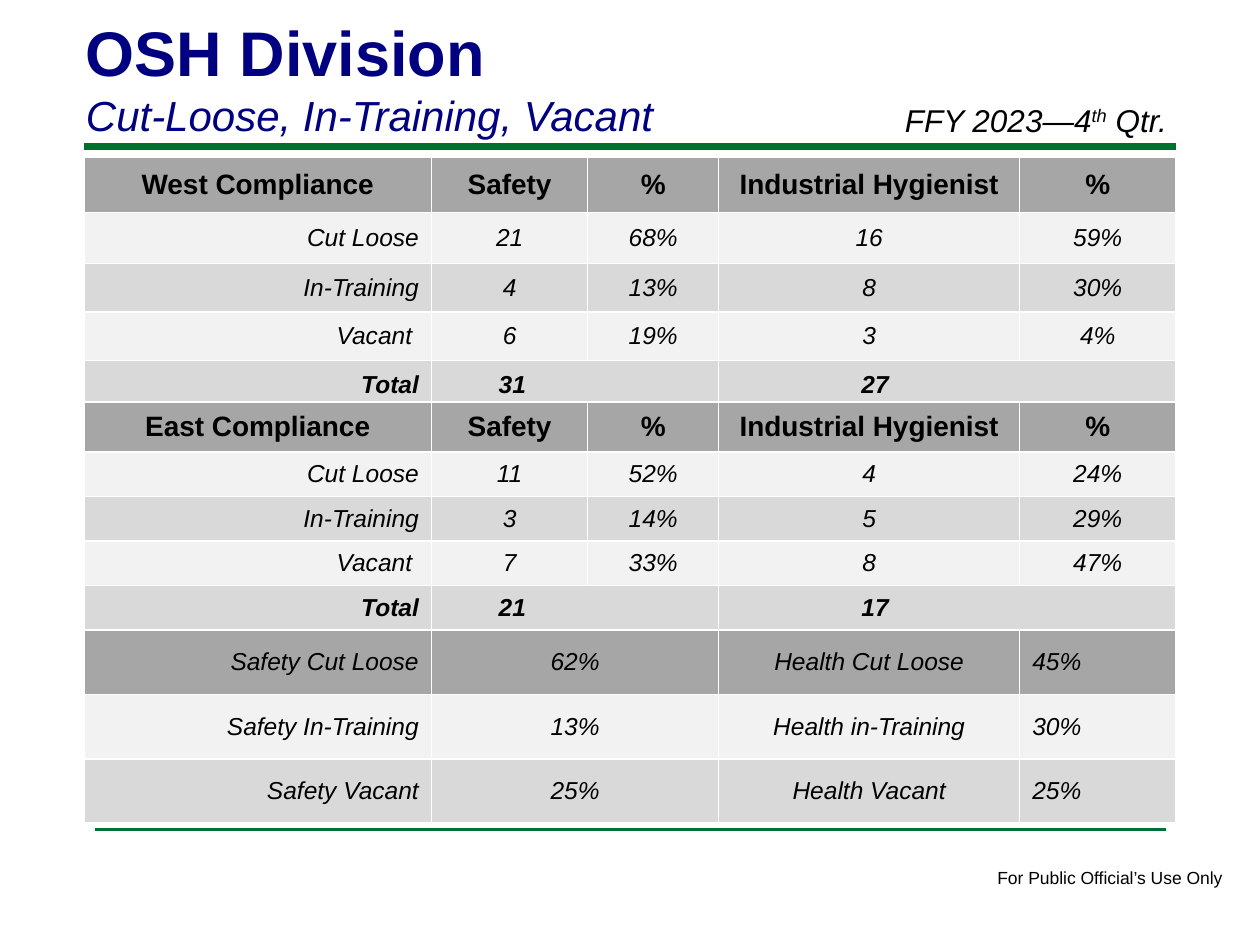
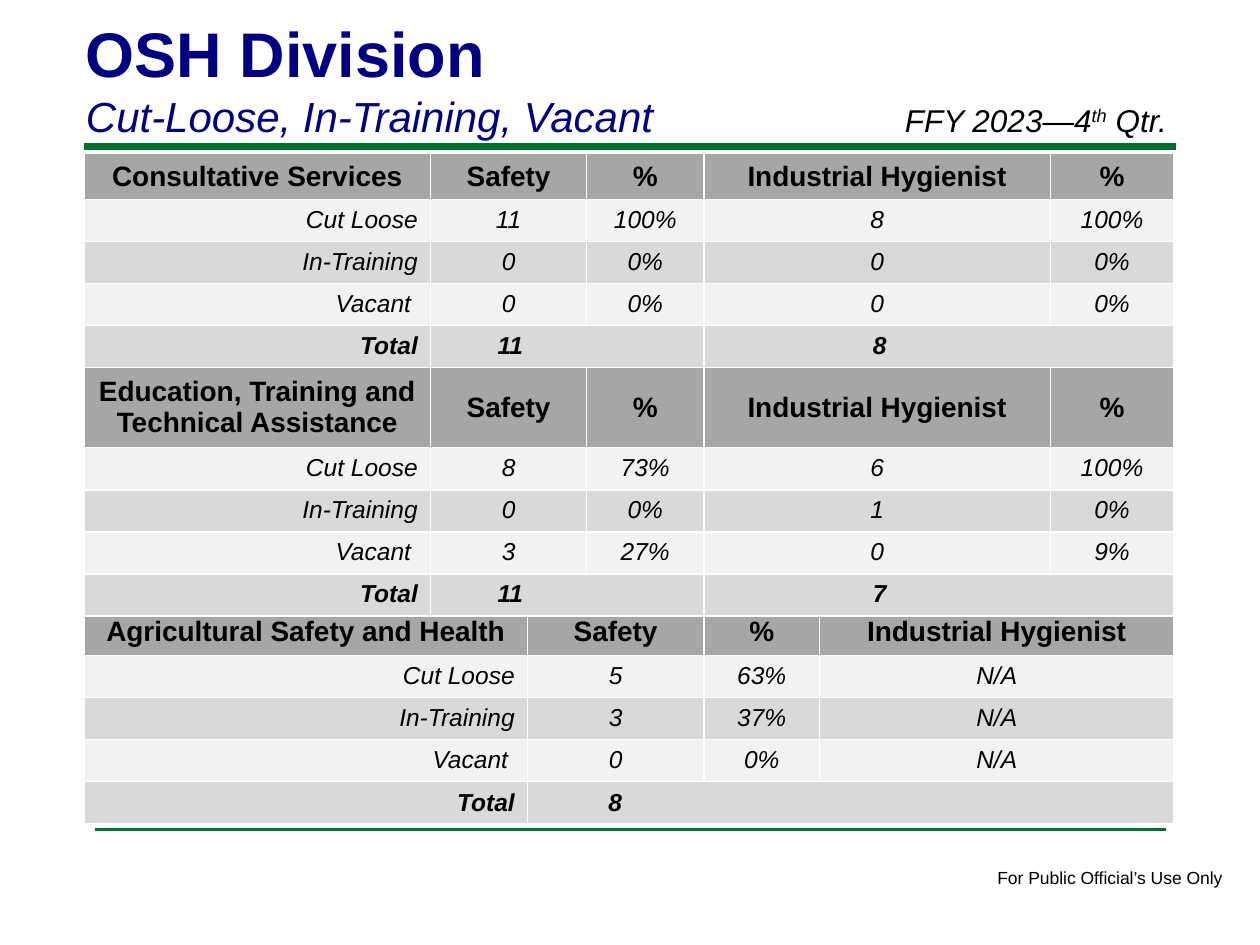
import pptx
import pptx.dml.color
import pptx.enum.shapes
import pptx.enum.text
import pptx.util
import lxml.etree

FONT = "Arial"
BLACK, NAVY, GREEN = "000000", "000080", "007030"
HEADER_GRAY, LIGHT_GRAY, MID_GRAY = "A6A6A6", "F2F2F2", "D9D9D9"

# The slide is a grid of 120 columns by 90 rows of square units
SLIDE_WIDTH, SLIDE_HEIGHT = pptx.util.Inches(10), pptx.util.Inches(7.5)
UNIT = SLIDE_WIDTH // 120

ALIGN = pptx.enum.text.PP_ALIGN
ANCHOR = pptx.enum.text.MSO_ANCHOR

HEADER_FORMAT = {"size": 16, "bold": True, "italic": False}
BODY_FORMAT = {"size": 14, "bold": False, "italic": True}
TOTAL_FORMAT = {"size": 14, "bold": True, "italic": True}

FIVE_HEADS = ("Safety", "%", "Industrial Hygienist", "%")


def grid(value):
    return pptx.util.Emu(round(value * UNIT))


def color(hex_string):
    return pptx.dml.color.RGBColor.from_string(hex_string)


def add_run(paragraph, text, values, text_color=BLACK):
    run = paragraph.add_run()
    run.text = text
    run.font.name = FONT
    run.font.color.rgb = color(text_color)
    for name, value in values.items():
        setattr(run.font, name, pptx.util.Pt(value) if name == "size" else value)
    return run


def add_text_frame(slide, box, anchor=ANCHOR.BOTTOM, wrap=True):
    text_frame = slide.shapes.add_textbox(*map(grid, box)).text_frame
    text_frame.word_wrap = wrap
    text_frame.vertical_anchor = anchor
    return text_frame


def add_rule(slide, left, right, row, weight):
    connector = slide.shapes.add_connector(
        pptx.enum.shapes.MSO_CONNECTOR.STRAIGHT,
        grid(left), grid(row), grid(right), grid(row))
    connector.line.color.rgb = color(GREEN)
    connector.line.width = pptx.util.Pt(weight)
    properties = connector._element.spPr
    lxml.etree.SubElement(properties, pptx.oxml.ns.qn("a:effectLst"))


# Rules and footer note
def add_frame(slide):
    add_rule(slide, 8, 112, 14, 4)
    add_rule(slide, 9, 111, 79, 2)
    footer = add_text_frame(slide, (93.8, 82, 24.1, 3.2), ANCHOR.TOP, wrap=False)
    add_run(footer.paragraphs[0], "For Public Official’s Use Only", {"size": 10})


# Two-line title on the left
def add_title(slide, top):
    title = add_text_frame(slide, (7, top, 99, 13.3))
    add_run(title.paragraphs[0], "OSH Division", {"size": 36, "bold": True}, NAVY)
    add_run(title.add_paragraph(), "Cut-Loose, In-Training, Vacant",
            {"size": 24, "italic": True}, NAVY)


# Reporting period on the right
def add_period(slide):
    paragraph = add_text_frame(slide, (85, 9, 30, 4.8)).paragraphs[0]
    values = {"size": 18, "italic": True}
    add_run(paragraph, "FFY 2023—4", values)
    ordinal = add_run(paragraph, "th", values)
    ordinal.font._element.set("baseline", "30000")
    add_run(paragraph, " Qtr.", values)


def fill_cell(cell, text, values, fill, alignment, anchor):
    cell.fill.solid()
    cell.fill.fore_color.rgb = color(fill)
    cell.vertical_anchor = anchor
    paragraph = cell.text_frame.paragraphs[0]
    paragraph.alignment = alignment
    if text:
        add_run(paragraph, text, values)


def share_out(parts, weights, length, attribute):
    for part, weight in zip(parts, weights):
        setattr(part, attribute, grid(length * weight / sum(weights)))


def add_plain_table(slide, box, columns, rows, row_weights, formats,
                    header_alignments, body_alignments, anchor=ANCHOR.MIDDLE):
    table = slide.shapes.add_table(len(rows), len(columns), *map(grid, box)).table
    share_out(table.columns, columns, box[2], "width")
    share_out(table.rows, row_weights, box[3], "height")
    for row_index, row in enumerate(rows):
        is_header = row_index == 0
        fill = HEADER_GRAY if is_header else (MID_GRAY, LIGHT_GRAY)[row_index % 2]
        alignments = header_alignments if is_header else body_alignments
        for column_index, text in enumerate(row):
            fill_cell(table.cell(row_index, column_index), text, formats[row_index],
                      fill, alignments[column_index],
                      ANCHOR.MIDDLE if is_header else anchor)
    return table


# Staffing of one unit: header, three states, total
def add_staff_table(slide, box, columns, row_weights, heads, states, totals,
                    anchor=ANCHOR.MIDDLE):
    """totals lists (first column, last column, text, indent) of merged cells."""
    count = len(columns)
    labels = ("Cut Loose", "In-Training", "Vacant ")
    rows = [heads]
    rows += [(label, *values) for label, values in zip(labels, states)]
    rows.append(("Total", *[""] * (count - 1)))
    formats = [HEADER_FORMAT] + [BODY_FORMAT] * 3 + [TOTAL_FORMAT]
    table = add_plain_table(
        slide, box, columns, rows, row_weights, formats, [ALIGN.CENTER] * count,
        [ALIGN.RIGHT] + [ALIGN.CENTER] * (count - 1), anchor)
    for first, last, text, indent in totals:
        cell = table.cell(4, first)
        cell.merge(table.cell(4, last))
        cell.margin_left = grid(indent)
        fill_cell(cell, text, TOTAL_FORMAT, MID_GRAY, ALIGN.LEFT, anchor)


# Combined shares of safety and health staff
def add_summary_table(slide, box):
    rows = [("Safety Cut Loose", "62%", "Health Cut Loose", "45%"),
            ("Safety In-Training", "13%", "Health in-Training", "30%"),
            ("Safety Vacant", "25%", "Health Vacant", "25%")]
    alignments = (ALIGN.RIGHT, ALIGN.CENTER, ALIGN.CENTER, ALIGN.LEFT)
    add_plain_table(slide, box, (2.76, 2.28, 2.39, 1.24), rows, (1, 1, 1),
                    [BODY_FORMAT] * 3, alignments, alignments)


def add_base_slide(presentation, title_top):
    slide = presentation.slides.add_slide(presentation.slide_layouts[6])
    add_frame(slide)
    add_title(slide, title_top)
    return slide


def build_compliance_slide(presentation):
    slide = add_base_slide(presentation, 0.6)
    columns = (2.76, 1.24, 1.04, 2.39, 1.24)
    add_staff_table(
        slide, (8, 15, 104, 24), columns, (0.44, 0.41, 0.39, 0.39, 0.39),
        ("West Compliance", *FIVE_HEADS),
        [("21", "68%", "16", "59%"), ("4", "13%", "8", "30%"), ("6", "19%", "3", "4%")],
        [(1, 2, "31", 6.4), (3, 4, "27", 13.6)])
    add_summary_table(slide, (8, 60, 104, 18.4))
    add_staff_table(
        slide, (8, 38.3, 104, 21.7), columns, (0.39, 0.35, 0.35, 0.35, 0.35),
        ("East Compliance", *FIVE_HEADS),
        [("11", "52%", "4", "24%"), ("3", "14%", "5", "29%"), ("7", "33%", "8", "47%")],
        [(1, 2, "21", 6.4), (3, 4, "17", 13.6)])
    add_period(slide)


def build_services_slide(presentation):
    slide = add_base_slide(presentation, 0.7)
    columns = (2.75, 1.24, 0.93, 2.75, 0.98)
    short_rows = (0.35, 0.32, 0.32, 0.32, 0.32)
    add_staff_table(
        slide, (8, 14.6, 103.8, 20.4), columns, short_rows,
        ("Consultative Services", *FIVE_HEADS),
        [("11", "100%", "8", "100%"), ("0", "0%", "0", "0%"), ("0", "0%", "0", "0%")],
        [(1, 2, "11", 6.4), (3, 4, "8", 16.1)], ANCHOR.TOP)
    add_staff_table(
        slide, (8, 58, 103.8, 20.4), (3.52, 1.4, 0.92, 2.81), short_rows,
        ("Agricultural Safety and Health", *FIVE_HEADS[:3]),
        [("5", "63%", "N/A"), ("3", "37%", "N/A"), ("0", "0%", "N/A")],
        [(1, 3, "8", 7.7)])
    add_staff_table(
        slide, (8, 35, 103.8, 23.7), columns, (0.59, 0.31, 0.31, 0.31, 0.31),
        ("Education, Training and Technical Assistance", *FIVE_HEADS),
        [("8", "73%", "6", "100%"), ("0", "0%", "1", "0%"), ("3", "27%", "0", "9%")],
        [(1, 2, "11", 6.4), (3, 4, "7", 16.1)], ANCHOR.TOP)
    add_period(slide)


def main():
    presentation = pptx.Presentation()
    presentation.slide_width, presentation.slide_height = SLIDE_WIDTH, SLIDE_HEIGHT
    build_compliance_slide(presentation)
    build_services_slide(presentation)
    presentation.save("out.pptx")


if __name__ == "__main__":
    main()
